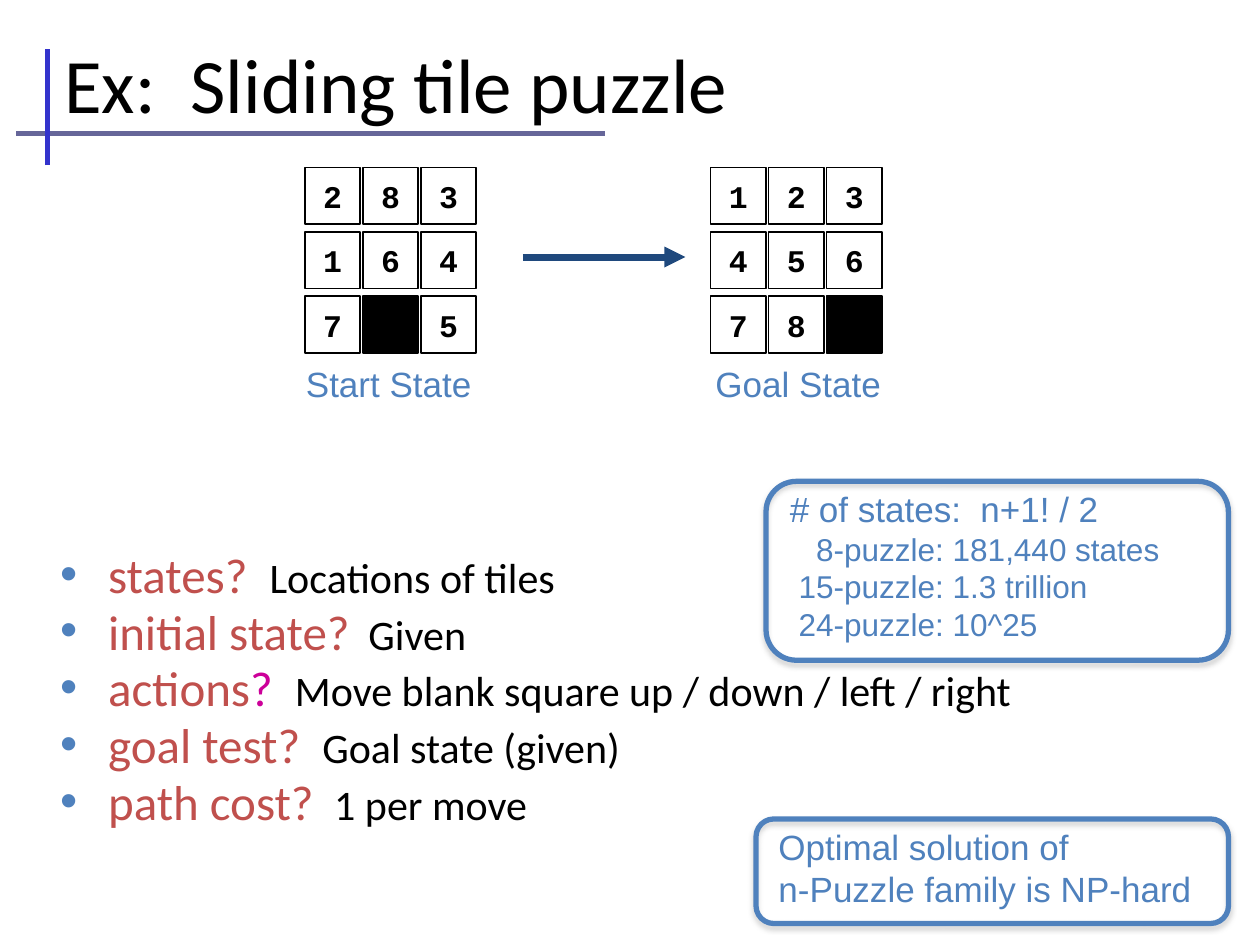
"""Build the sliding tile puzzle slide."""
from lxml import etree
from pptx import Presentation
from pptx.dml.color import RGBColor
from pptx.enum.shapes import MSO_CONNECTOR, MSO_SHAPE
from pptx.enum.text import MSO_ANCHOR, PP_ALIGN
from pptx.oxml.ns import qn
from pptx.util import Inches, Pt

STRAIGHT = MSO_CONNECTOR.STRAIGHT
RECTANGLE = MSO_SHAPE.RECTANGLE
ROUNDED = MSO_SHAPE.ROUNDED_RECTANGLE
MIDDLE = MSO_ANCHOR.MIDDLE
LEFT, CENTER = PP_ALIGN.LEFT, PP_ALIGN.CENTER
BLACK, WHITE, BLUE, RED, MAGENTA = "000000", "FFFFFF", "4F81BD", "C0504D", "CC0099"


def color(value):
    return RGBColor.from_string(value)


def add_run(paragraph, text, size, font, text_color, bold=False):
    run = paragraph.add_run()
    run.text = text
    run.font.size = Pt(size)
    run.font.name = font
    run.font.bold = bold
    run.font.color.rgb = color(text_color)


presentation = Presentation()
presentation.slide_width = Inches(10)
presentation.slide_height = Inches(7.5)
slide = presentation.slides.add_slide(presentation.slide_layouts[5])
shapes = slide.shapes

title = shapes.title
title.left, title.top = Inches(0.41), Inches(0.1)
title.width, title.height = Inches(8.92), Inches(1.12)
title.text_frame.vertical_anchor = MIDDLE
title.text_frame.paragraphs[0].alignment = LEFT
add_run(title.text_frame.paragraphs[0], "Ex:  Sliding tile puzzle", 44, "Calibri", BLACK)

lines = [
    (0.13, 1.06, 4.8, 1.06, "666699", 3, False),
    (0.38, 1.31, 0.38, 0.39, "3333CC", 3, False),
    (4.15, 2.04, 5.44, 2.04, "1F497D", 4, True),
]
for x1, y1, x2, y2, line_color, width, has_arrow in lines:
    connector = shapes.add_connector(STRAIGHT, Inches(x1), Inches(y1), Inches(x2), Inches(y2))
    connector.line.color.rgb = color(line_color)
    connector.line.width = Pt(width)
    if has_arrow:
        etree.SubElement(connector.line._get_or_add_ln(), qn("a:tailEnd"), type="triangle")
    etree.SubElement(connector._element.spPr, qn("a:effectLst"))

boards = [
    (2.42, 2.33, "Start State", ["283", "164", "7 5"]),
    (5.64, 5.58, "Goal State", ["123", "456", "78 "]),
]
for board_left, label_left, label, rows in boards:
    for row, digits in enumerate(rows):
        for column, digit in enumerate(digits):
            tile = shapes.add_shape(
                RECTANGLE, Inches(board_left + 0.46 * column), Inches(1.33 + 0.51 * row),
                Inches(0.44), Inches(0.45))
            tile.shadow.inherit = False
            tile.fill.solid()
            tile.fill.fore_color.rgb = color(BLACK if digit == " " else WHITE)
            tile.line.color.rgb = color(BLACK)
            tile.line.width = Pt(1)
            if digit != " ":
                tile.text_frame.word_wrap = False
                tile.text_frame.vertical_anchor = MIDDLE
                paragraph = tile.text_frame.paragraphs[0]
                paragraph.alignment = CENTER
                add_run(paragraph, digit, 18, "Courier New", BLACK, True)
    caption = shapes.add_textbox(Inches(label_left), Inches(2.83), Inches(1.53), Inches(0.44))
    caption.text_frame.word_wrap = False
    add_run(caption.text_frame.paragraphs[0], label, 20, "Arial", BLUE)

questions = [
    [("states?  ", 28, RED), ("Locations of tiles", 24, BLACK)],
    [("initial state?", 28, RED), ("  Given", 24, BLACK)],
    [("actions", 28, RED), ("?  ", 28, MAGENTA),
     ("Move blank square up / down / left / right", 24, BLACK)],
    [("goal test?  ", 28, RED), ("Goal state (given)", 24, BLACK)],
    [("path cost? ", 28, RED), (" 1 per move", 24, BLACK)],
]
body = shapes.add_textbox(Inches(0.38), Inches(4.36), Inches(9.5), Inches(2.4))
body.text_frame.word_wrap = True
for index, runs in enumerate(questions):
    paragraph = body.text_frame.add_paragraph() if index else body.text_frame.paragraphs[0]
    paragraph.line_spacing = 0.8
    paragraph.space_before = Pt(5.6)
    properties = paragraph._p.get_or_add_pPr()
    properties.set("marL", str(Inches(0.38)))
    properties.set("indent", str(Inches(-0.38)))
    bullet_color = etree.SubElement(properties, qn("a:buClr"))
    etree.SubElement(bullet_color, qn("a:srgbClr"), val=BLUE)
    etree.SubElement(properties, qn("a:buFont"), typeface="Arial")
    etree.SubElement(properties, qn("a:buChar"), char="•")
    for text, size, text_color in runs:
        add_run(paragraph, text, size, "Calibri", text_color)

callouts = [
    ((6.08, 3.82, 3.67, 1.42), (6.17, 3.82, 3.67, 1.68), [
        ("# of states:  n+1! / 2", 20, 0),
        ("8-puzzle: 181,440 states", 18, 0.21),
        ("15-puzzle: 1.3 trillion", 18, 0.07),
        ("24-puzzle: 10^25", 18, 0.07),
    ]),
    ((6, 6.5, 3.75, 0.83), (6.08, 6.5, 3.58, 0.77), [
        ("Optimal solution of", 20, 0),
        ("n-Puzzle family is NP-hard", 20, 0),
    ]),
]
for frame_box, text_box, entries in callouts:
    frame = shapes.add_shape(ROUNDED, *map(Inches, frame_box))
    frame.adjustments[0] = 0.17
    frame.fill.background()
    frame.line.color.rgb = color(BLUE)
    frame.line.width = Pt(3)
    frame.shadow.inherit = False
    effects = frame._element.spPr.find(qn("a:effectLst"))
    shadow = etree.SubElement(
        effects, qn("a:outerShdw"), blurRad=str(Pt(3.1)), dist=str(Pt(1.8)),
        dir="5400000", rotWithShape="0")
    shadow_color = etree.SubElement(shadow, qn("a:srgbClr"), val="808080")
    etree.SubElement(shadow_color, qn("a:alpha"), val="35000")

    note = shapes.add_textbox(*map(Inches, text_box))
    note.text_frame.word_wrap = True
    for index, (text, size, indent) in enumerate(entries):
        paragraph = note.text_frame.add_paragraph() if index else note.text_frame.paragraphs[0]
        paragraph._p.get_or_add_pPr().set("marL", str(Inches(indent)))
        add_run(paragraph, text, size, "Arial", BLUE)

presentation.save("out.pptx")
